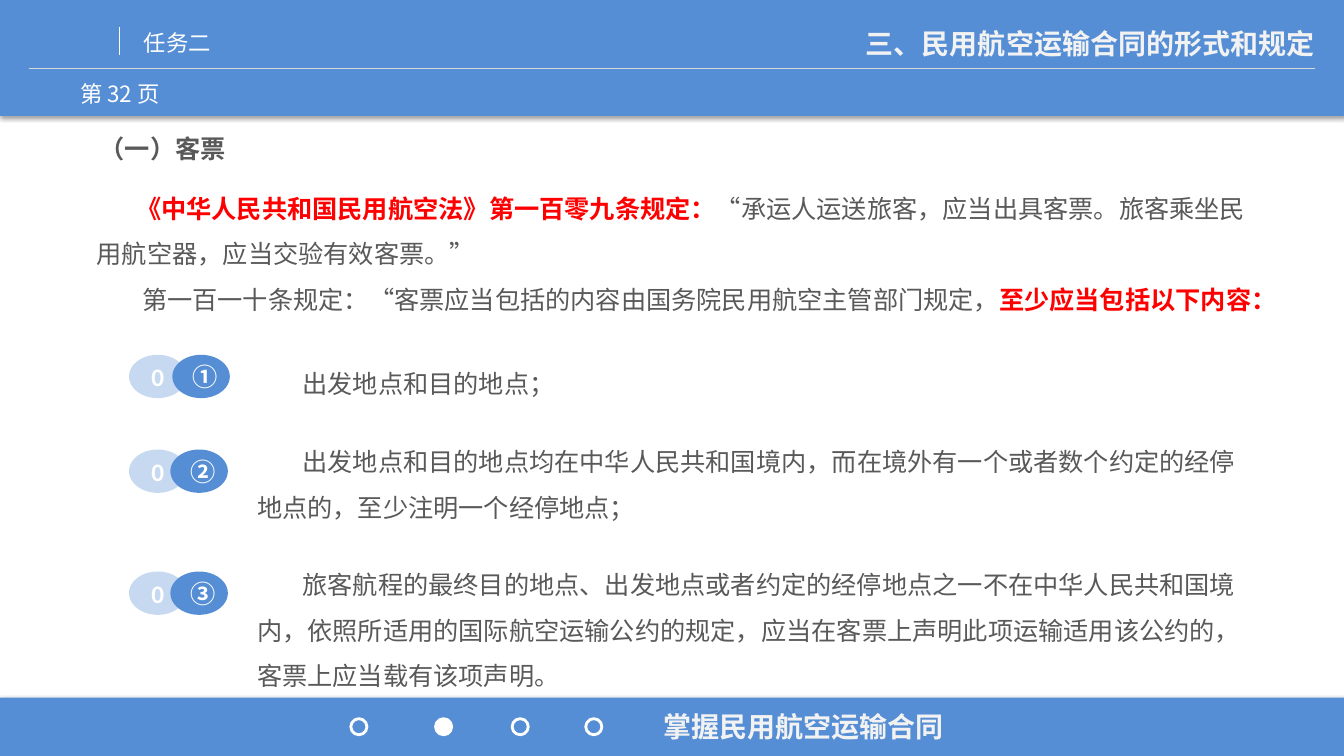
"""Build the slide on ticket rules in civil aviation transport contracts."""
from lxml import etree
from pptx import Presentation
from pptx.dml.color import RGBColor
from pptx.enum import shapes, text
from pptx.oxml import ns
from pptx.util import Inches, Pt

COLORS = {"blue": "558ED5", "pale": "C6D9F1", "white": "FFFFFF", "offwhite": "F2F2F2",
          "rule": "D9D9D9", "body": "595959", "red": "FF0000", "shadow": "000000"}
CJK = "Noto Sans CJK SC"


def add_filled(kind, box, fill):
    part = slide.shapes.add_shape(kind, *map(Inches, box))
    part.shadow.inherit = False
    part.line.fill.background()
    if fill:
        part.fill.solid()
        part.fill.fore_color.rgb = RGBColor.from_string(COLORS[fill])
    else:
        part.fill.background()
    return part


def write(part, paragraphs, size, color, bold=False, latin=CJK, align=text.PP_ALIGN.LEFT,
          anchor=text.MSO_ANCHOR.TOP, insets=(0.1, 0.05, 0.1, 0.05), spacing=1.0):
    frame = part.text_frame
    frame.word_wrap = True
    frame.auto_size = text.MSO_AUTO_SIZE.NONE
    frame.vertical_anchor = anchor
    (frame.margin_left, frame.margin_top,
     frame.margin_right, frame.margin_bottom) = map(Inches, insets)
    for i, (indent, pieces) in enumerate(paragraphs):
        paragraph = frame.add_paragraph() if i else frame.paragraphs[0]
        paragraph.alignment = align
        paragraph.line_spacing = spacing
        font = paragraph.font
        font.size, font.bold, font.name = Pt(size), bold, latin
        font.color.rgb = RGBColor.from_string(COLORS[color])
        properties = paragraph._p.get_or_add_pPr()
        properties.set("marL", "0")
        properties.set("indent", str(Inches(indent)))
        east_asian = etree.SubElement(properties.find(ns.qn("a:defRPr")), ns.qn("a:ea"))
        east_asian.set("typeface", CJK)
        for words, emphasis in pieces:
            run = paragraph.add_run()
            run.text = words
            if emphasis:
                run.font.bold = True
                run.font.color.rgb = RGBColor.from_string(COLORS["red"])


deck = Presentation()
deck.slide_width, deck.slide_height = Inches(13.33), Inches(7.5)
slide = deck.slides.add_slide(deck.slide_layouts[5])

for top, height in ((0, 1.15), (6.92, 0.58)):
    band = add_filled(shapes.MSO_SHAPE.RECTANGLE, (0, top, 13.33, height), "blue")
    effects = band._element.spPr.find(ns.qn("a:effectLst"))
    shadow = etree.SubElement(effects, ns.qn("a:outerShdw"), blurRad=str(Pt(3.1)),
                              dist=str(Pt(1.8)), dir="5400000", rotWithShape="0")
    tint = etree.SubElement(shadow, ns.qn("a:srgbClr"), val=COLORS["shadow"])
    etree.SubElement(tint, ns.qn("a:alpha"), val="35000")

for ends, color in (((0.29, 0.68, 13.04, 0.68), "rule"), ((1.19, 0.27, 1.19, 0.55), "white")):
    divider = slide.shapes.add_connector(shapes.MSO_CONNECTOR.STRAIGHT, *map(Inches, ends))
    divider.line.color.rgb = RGBColor.from_string(COLORS[color])
    divider.line.width = Pt(0.75)
    etree.SubElement(divider._element.spPr, ns.qn("a:effectLst"))

heading = slide.shapes.title
slide.shapes._spTree.append(heading._element)
heading.left, heading.top, heading.width, heading.height = map(Inches, (8.09, 0.21, 5.05, 0.44))
write(heading, [(0, [("三、民用航空运输合同的形式和规定", False)])], 20, "offwhite", True,
      align=text.PP_ALIGN.RIGHT)

labels = (
    ("第 32 页", (0.59, 0.75, 1.2, 0.4), 16, "white", False, text.PP_ALIGN.CENTER, 1.0),
    ("任务二", (1.33, 0.24, 3.26, 0.37), 16, "white", False, text.PP_ALIGN.LEFT, 1.0),
    ("掌握民用航空运输合同", (6.48, 6.99, 3.94, 0.44), 20, "offwhite", True,
     text.PP_ALIGN.LEFT, 1.0),
    ("（一）客票", (0.89, 1.17, 4.06, 0.47), 18, "body", True, text.PP_ALIGN.LEFT, 1.35),
)
for words, box, size, color, bold, align, spacing in labels:
    label = slide.shapes.add_textbox(*map(Inches, box))
    write(label, [(0, [(words, False)])], size, color, bold, align=align, spacing=spacing)

for left, fill in ((3.48, None), (4.32, "white"), (5.08, None), (5.81, None)):
    progress_dot = add_filled(shapes.MSO_SHAPE.OVAL, (left, 7.13, 0.16, 0.16), fill)
    progress_dot.line.color.rgb = RGBColor.from_string(COLORS["white"])
    progress_dot.line.width = Pt(2)

articles = slide.shapes.add_textbox(*map(Inches, (0.96, 1.72, 11.72, 1.46)))
write(articles, [
    (0.39, [("《中华人民共和国民用航空法》第一百零九条规定：", True),
            ("“承运人运送旅客，应当出具客票。旅客乘坐民用航空器，应当交验有效客票。”", False)]),
    (0.45, [("第一百一十条规定：“客票应当包括的内容由国务院民用航空主管部门规定，", False),
            ("至少应当包括以下内容：", True)]),
], 18, "body", insets=(0, 0.05, 0.1, 0.05), spacing=1.5)

requirements = (
    ("①", 1.71, 3.52, (2.55, 3.44, 9.65, 0.57), "出发地点和目的地点；"),
    ("②", 1.69, 4.46, (2.55, 4.3, 9.81, 0.86),
     "出发地点和目的地点均在中华人民共和国境内，而在境外有一个或者数个约定的经停地点的，"
     "至少注明一个经停地点；"),
    ("③", 1.69, 5.67, (2.55, 5.55, 9.73, 1.25),
     "旅客航程的最终目的地点、出发地点或者约定的经停地点之一不在中华人民共和国境内，"
     "依照所适用的国际航空运输公约的规定，应当在客票上声明此项运输适用该公约的，"
     "客票上应当载有该项声明。"),
)
for number, number_left, top, box, words in requirements:
    for digit, left, fill, latin in (("0", 1.28, "pale", "Calibri"),
                                     (number, number_left, "blue", CJK)):
        badge = add_filled(shapes.MSO_SHAPE.OVAL, (left, top, 0.57, 0.43), fill)
        write(badge, [(0, [(digit, False)])], 18, "white", True, latin,
              text.PP_ALIGN.CENTER, text.MSO_ANCHOR.MIDDLE, (0.12, 0.06, 0.12, 0.06))
    requirement = slide.shapes.add_textbox(*map(Inches, box))
    write(requirement, [(0.45, [(words, False)])], 18, "body", latin="Arial Narrow",
          anchor=text.MSO_ANCHOR.MIDDLE, insets=(0, 0, 0, 0), spacing=1.5)

deck.save("out.pptx")
